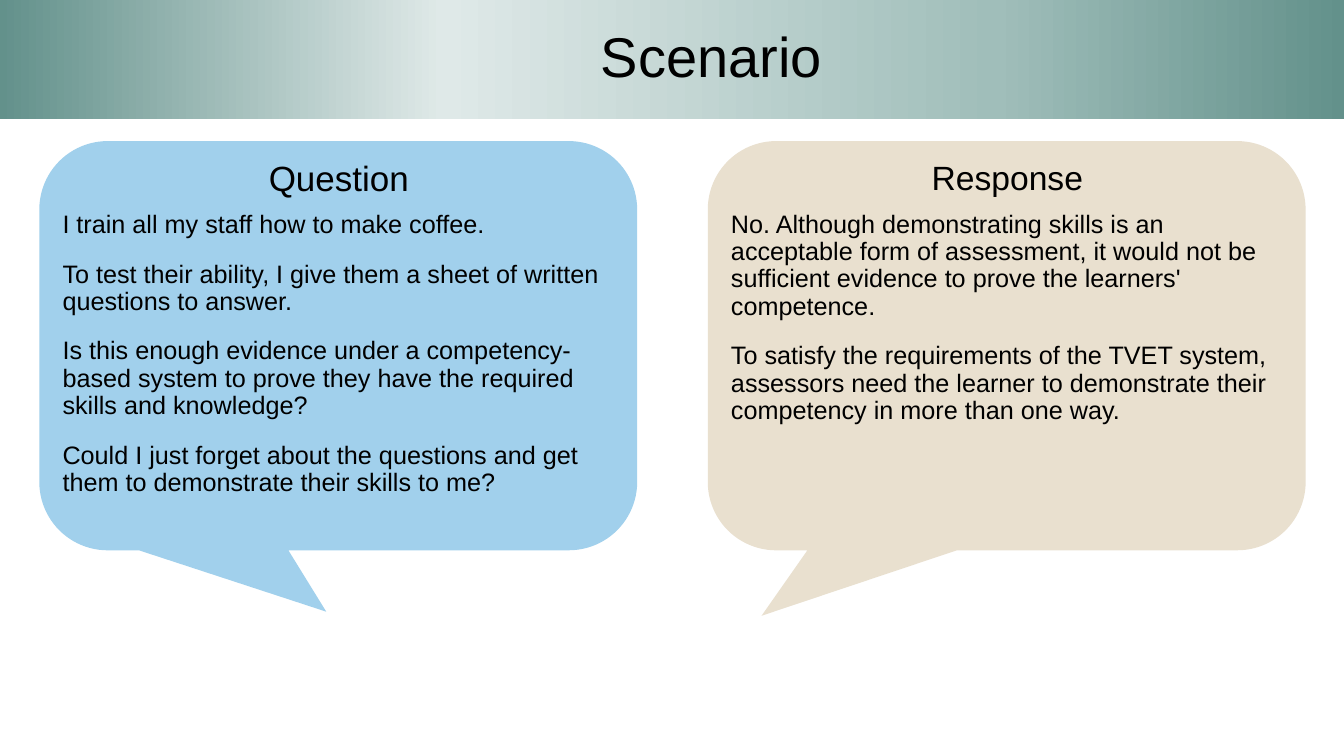
from copy import deepcopy

from pptx import Presentation
from pptx.dml.color import RGBColor
from pptx.enum.shapes import MSO_SHAPE
from pptx.enum.text import MSO_ANCHOR, MSO_AUTO_SIZE, PP_ALIGN
from pptx.oxml.ns import qn
from pptx.oxml.xmlchemy import OxmlElement
from pptx.util import Pt

PX = 9144
WIDE, HIGH = 1333, 750

BLACK = RGBColor(0x00, 0x00, 0x00)
BLUE = RGBColor(0xA1, 0xD0, 0xEC)
SAND = RGBColor(0xE9, 0xE0, 0xCF)
TEAL = RGBColor(0x63, 0x91, 0x8B)
MIST = RGBColor(0xDF, 0xE9, 0xE8)
SAGE = RGBColor(0xA0, 0xBE, 0xBA)
BAND = [(0, TEAL), (0.33, MIST), (0.74, SAGE), (1, TEAL)]

FONT = {"name": "Arial", "bold": False}
FRAME = {"word_wrap": True, "auto_size": MSO_AUTO_SIZE.NONE}
HEAD = {"alignment": PP_ALIGN.CENTER, "line_spacing": 0.9}
BODY = {"alignment": PP_ALIGN.LEFT, "line_spacing": 0.9, "space_after": Pt(6)}

ASK = [
    "I train all my staff how to make coffee.",
    "To test their ability, I give them a sheet of written questions to answer.",
    "Is this enough evidence under a competency-based system to prove they have the required skills and knowledge?",
    "Could I just forget about the questions and get them to demonstrate their skills to me?",
]
REPLY = [
    "No. Although demonstrating skills is an acceptable form of assessment, it would not be sufficient evidence to prove the learners' competence.",
    "To satisfy the requirements of the TVET system, assessors need the learner to demonstrate their competency in more than one way.",
]


def assign(item, form):
    for key, value in form.items():
        setattr(item, key, value)


def place(shape, box):
    names = ("left", "top", "width", "height")
    assign(shape, {name: n * PX for name, n in zip(names, box)})


def write(shape, box, lines, size, form, anchor=MSO_ANCHOR.TOP, margin=0):
    place(shape, box)
    frame = shape.text_frame
    frame.text = "\n".join(lines)
    assign(frame, {**FRAME, "vertical_anchor": anchor})
    for i, para in enumerate(frame.paragraphs):
        props = para._p.get_or_add_pPr()
        props.set("marL", str(margin * PX))
        props.set("indent", "0")
        props.append(OxmlElement("a:buNone"))
        assign(para, {**form, "space_before": Pt(10 if i else 0)})
        for run in para.runs:
            assign(run.font, {**FONT, "size": Pt(size)})
            run.font.color.rgb = BLACK


def banner(title, box):
    write(title, box, ["Scenario"], 40, HEAD, MSO_ANCHOR.MIDDLE, 78)
    fill = title.fill
    fill.gradient()
    fill.gradient_angle = 0
    stops = title.element.spPr.find(".//" + qn("a:gsLst"))
    while len(stops) < len(BAND):
        stops.append(deepcopy(stops[0]))
    for stop, (spot, color) in zip(fill.gradient_stops, BAND):
        stop.position = spot
        stop.color.rgb = color


def panel(slide, box, color, tail, head, body, label, size, lines):
    x, y, w, h = box
    bubble = slide.shapes.add_shape(MSO_SHAPE.ROUNDED_RECTANGULAR_CALLOUT, 0, 0, 0, 0)
    place(bubble, box)
    for i, value in enumerate((*tail, 0.167)):
        bubble.adjustments[i] = value
    bubble.shadow.inherit = False
    bubble.fill.solid()
    bubble.fill.fore_color.rgb = color
    bubble.line.fill.background()
    slide.shapes.title.element.addprevious(bubble.element)
    write(head, (x + 2, y + 15, w - 3, 50), [label], size, HEAD)
    write(body, (x + 13, y + 65, w - 27, h), lines, 18, BODY)


def main():
    deck = Presentation()
    deck.slide_width, deck.slide_height = WIDE * PX, HIGH * PX
    slide = deck.slides.add_slide(deck.slide_layouts.get_by_name("Comparison"))
    title, left, ask, right, reply = slide.placeholders
    banner(title, (0, 0, WIDE, 118))
    panel(slide, (702, 140, 593, 406), SAND, (-0.41, 0.66), right, reply, "Response", 24, REPLY)
    panel(slide, (39, 140, 593, 406), BLUE, (-0.02, 0.65), left, ask, "Question", 25, ASK)
    deck.save("out.pptx")


if __name__ == "__main__":
    main()
